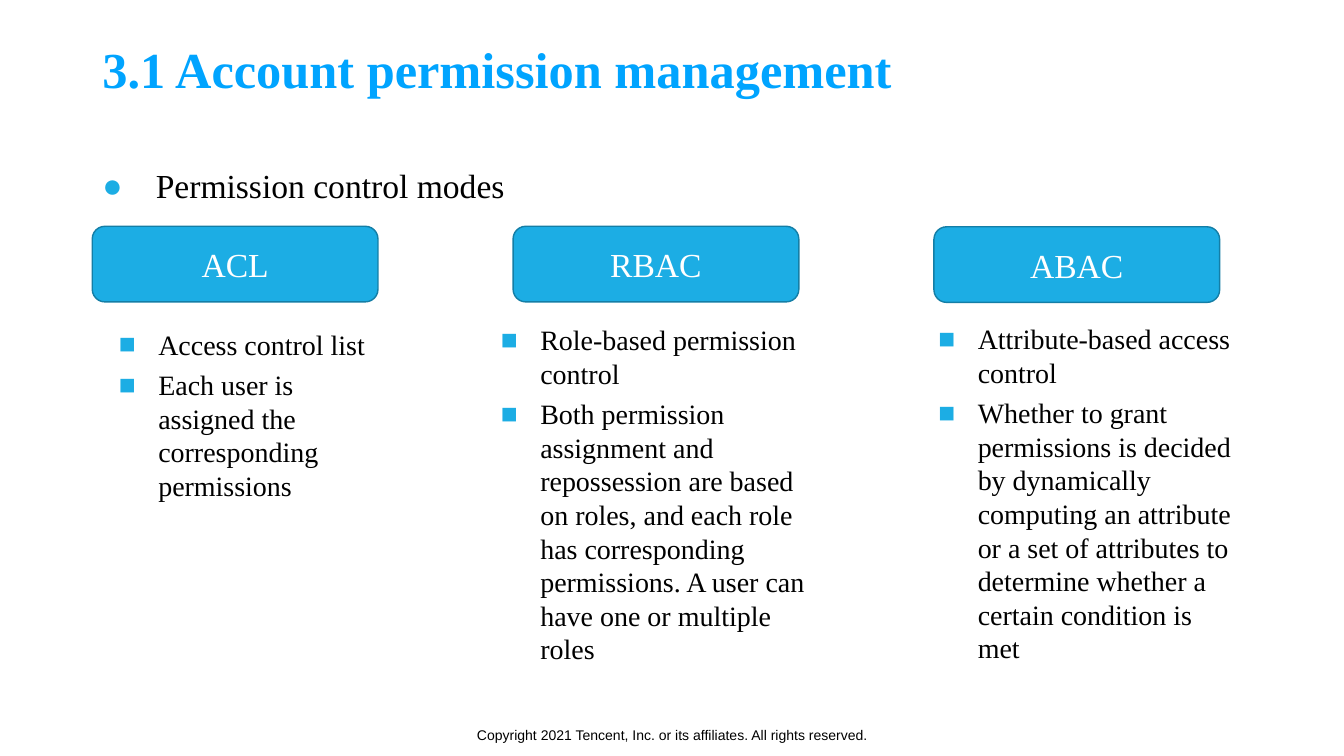
from dataclasses import dataclass

import pptx
import pptx.dml.color
import pptx.enum.shapes
import pptx.enum.text
import pptx.oxml.ns
import pptx.util
from lxml import etree

Pt = pptx.util.Pt
ALIGN = pptx.enum.text.PP_ALIGN
ANCHOR = pptx.enum.text.MSO_ANCHOR
SERIF = "Times New Roman"
BLUE, EDGE, BLACK, WHITE = "1CADE4", "147EA6", "000000", "FFFFFF"

FRAME = {
    "word_wrap": True,
    "auto_size": pptx.enum.text.MSO_AUTO_SIZE.NONE,
    "margin_left": Pt(14.4),
    "margin_right": Pt(14.4),
    "margin_top": Pt(7.2),
    "margin_bottom": Pt(7.2),
}


@dataclass(frozen=True)
class Area:
    left: float
    top: float
    width: float
    height: float

    def points(self) -> tuple:
        return tuple(map(Pt, (self.left, self.top, self.width, self.height)))


@dataclass(frozen=True)
class Style:
    size: float
    color: str = BLACK
    name: str = SERIF
    bold: bool = False
    align: ALIGN = ALIGN.LEFT
    anchor: ANCHOR = ANCHOR.TOP
    ratio: float = 1.0
    before: float = 0
    mark: str = ""
    margin: float = 0
    hang: float = 0
    level: int = 0


@dataclass(frozen=True)
class Mode:
    name: str
    top: float
    items: tuple[str, ...]
    area: Area


TITLE = Style(72, "00A4FF", bold=True, anchor=ANCHOR.MIDDLE, ratio=0.9)
TOPIC = Style(48, ratio=1.5, mark="●", margin=76.3, hang=76.3)
LABEL = Style(48, WHITE, align=ALIGN.CENTER, anchor=ANCHOR.MIDDLE)
ITEM = Style(40, before=10, mark="■", margin=131.8, hang=56.2, level=1)
FOOTER = Style(20, name="Arial", align=ALIGN.CENTER, anchor=ANCHOR.MIDDLE)

LEFT, STEP = 131.8, 601.2
MODES = (
    Mode("ACL", 323.3,
         ("Access control list",
          "Each user is assigned the corresponding permissions"),
         Area(79.9, 460.1, 460.1, 422.6)),
    Mode("RBAC", 323.3,
         ("Role-based permission control",
          "Both permission assignment and repossession are based on roles, "
          "and each role has corresponding permissions. "
          "A user can have one or multiple roles"),
         Area(625.7, 453.6, 550.1, 422.6)),
    Mode("ABAC", 324,
         ("Attribute-based access control",
          "Whether to grant permissions is decided by dynamically computing "
          "an attribute or a set of attributes to determine whether "
          "a certain condition is met"),
         Area(1250.6, 452.2, 531.4, 422.6)),
)


def paint(target, color: str) -> None:
    """Give a colour format its RGB value."""
    target.rgb = pptx.dml.color.RGBColor.from_string(color)


def assign(target, values: dict) -> None:
    for key, value in values.items():
        setattr(target, key, value)


def add_mark(para, style: Style) -> None:
    """Set a hanging indent and a coloured bullet."""
    qn = pptx.oxml.ns.qn
    props = para._p.get_or_add_pPr()
    props.set("marL", str(Pt(style.margin)))
    props.set("indent", str(-Pt(style.hang)))
    tint = etree.SubElement(props, qn("a:buClr"))
    etree.SubElement(tint, qn("a:srgbClr")).set("val", BLUE)
    etree.SubElement(props, qn("a:buFont")).set("typeface", "Arial")
    etree.SubElement(props, qn("a:buChar")).set("char", style.mark)


def write(shape, lines: tuple[str, ...], style: Style) -> None:
    frame = shape.text_frame
    assign(frame, FRAME | {"vertical_anchor": style.anchor})
    for index, line in enumerate(lines):
        para = frame.add_paragraph() if index else frame.paragraphs[0]
        if style.mark:
            add_mark(para, style)
        assign(para, {
            "alignment": style.align,
            "level": style.level,
            "line_spacing": style.ratio,
            "space_before": Pt(style.before if index else 0),
        })
        run = para.add_run()
        run.text = line
        assign(run.font, {"name": style.name, "size": Pt(style.size),
                          "bold": style.bold})
        paint(run.font.color, style.color)


def add_text(slide, area: Area, lines: tuple[str, ...], style: Style) -> None:
    write(slide.shapes.add_textbox(*area.points()), lines, style)


def add_label(slide, area: Area, name: str) -> None:
    kind = pptx.enum.shapes.MSO_SHAPE.ROUNDED_RECTANGLE
    shape = slide.shapes.add_shape(kind, *area.points())
    shape.shadow.inherit = False
    shape.fill.solid()
    paint(shape.fill.fore_color, BLUE)
    paint(shape.line.color, EDGE)
    shape.line.width = Pt(2)
    write(shape, (name,), LABEL)


def main() -> None:
    deck = pptx.Presentation()
    assign(deck, {"slide_width": Pt(1920), "slide_height": Pt(1080)})
    slide = deck.slides.add_slide(deck.slide_layouts[6])
    add_text(slide, Area(586, 1021, 749, 57.6),
             ("Copyright 2021 Tencent, Inc. or its affiliates. "
              "All rights reserved.",), FOOTER)
    add_text(slide, Area(LEFT, 64.8, 1546.6, 75.6),
             ("3.1 Account permission management",), TITLE)
    add_text(slide, Area(LEFT, 200.2, 1679, 793.4),
             ("Permission control modes",), TOPIC)
    for index, mode in enumerate(MODES):
        place = Area(LEFT + index * STEP, mode.top, 408.2, 108)
        add_label(slide, place, mode.name)
        add_text(slide, mode.area, mode.items, ITEM)
    deck.save("out.pptx")


if __name__ == "__main__":
    main()
